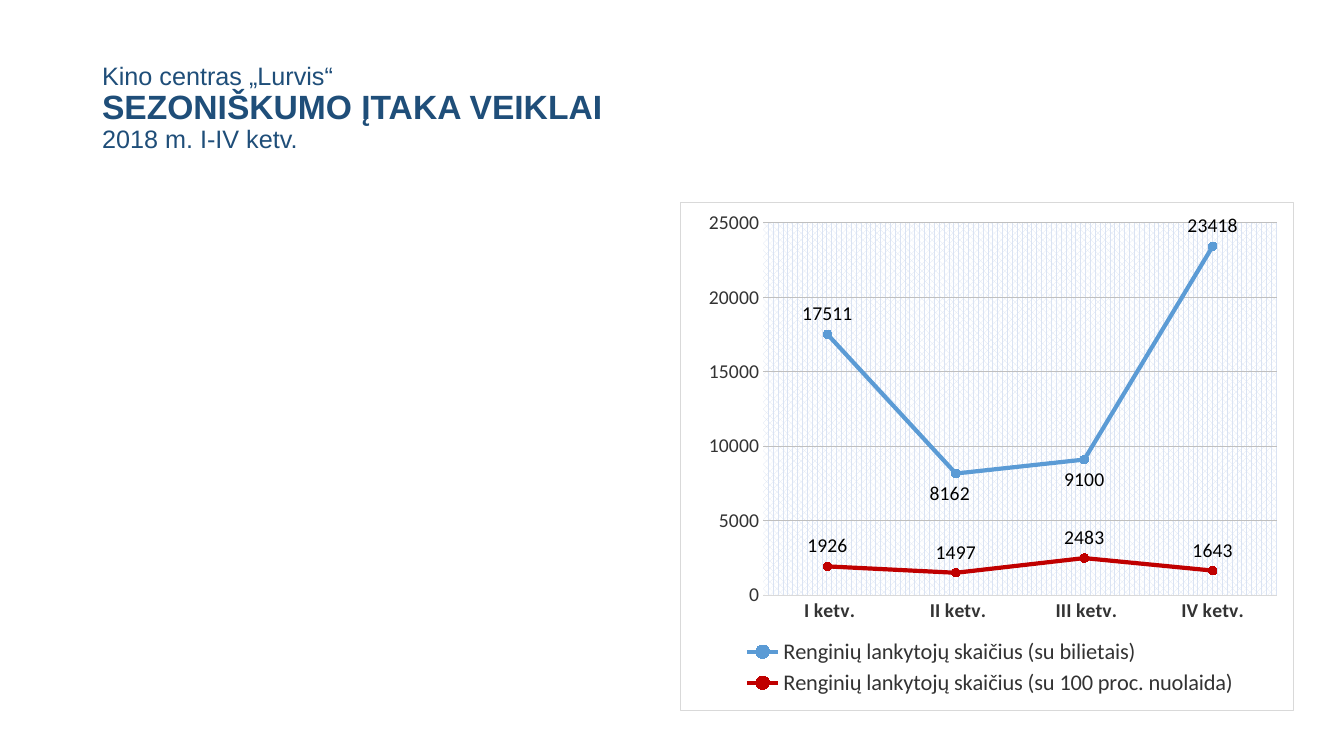
from lxml.etree import SubElement
from pptx import Presentation
from pptx.chart.data import CategoryChartData
from pptx.dml.color import RGBColor
from pptx.enum.chart import (XL_CHART_TYPE, XL_LABEL_POSITION, XL_LEGEND_POSITION,
                             XL_MARKER_STYLE, XL_TICK_MARK)
from pptx.enum.text import MSO_ANCHOR, MSO_AUTO_SIZE, PP_ALIGN
from pptx.oxml import parse_xml
from pptx.oxml.ns import nsdecls, qn
from pptx.util import Emu, Pt

NAVY = RGBColor(0x1F, 0x4E, 0x79)
BLUE = RGBColor(0x5B, 0x9B, 0xD5)
RED = RGBColor(0xC0, 0x00, 0x00)
BLACK = RGBColor(0x00, 0x00, 0x00)
DARK_GRAY = RGBColor(0x33, 0x33, 0x33)
GRID_GRAY = RGBColor(0xBF, 0xBF, 0xBF)
BORDER_GRAY = RGBColor(0xD9, 0xD9, 0xD9)
PALE_BLUE = RGBColor(0xDA, 0xE3, 0xF3)
WHITE = RGBColor(0xFF, 0xFF, 0xFF)

SLIDE_SIZE = (1344, 756)
TITLE_BOX = (92, 36, 1159, 146)
CHART_BOX = (680, 202, 614, 509)
TITLE_LINES = [
    ("Kino centras „Lurvis“", 18, False),
    ("SEZONIŠKUMO ĮTAKA VEIKLAI", 24, True),
    ("2018 m. I-IV ketv.", 18, False),
]
QUARTERS = [" I ketv.", " II ketv.", " III ketv.", "IV ketv."]
VISITORS = [
    ("Renginių lankytojų skaičius (su bilietais)", (17511, 8162, 9100, 23418), BLUE),
    ("Renginių lankytojų skaičius (su 100 proc. nuolaida)", (1926, 1497, 2483, 1643), RED),
]
LABELS_BELOW = (1, 2)
PLOT_LAYOUT = {"layoutTarget": "inner", "xMode": "edge", "yMode": "edge",
               "x": 0.135, "y": 0.04, "w": 0.838, "h": 0.733}
LEGEND_LAYOUT = {"xMode": "edge", "yMode": "edge",
                 "x": 0.09, "y": 0.85, "w": 0.83, "h": 0.13}
SHIFTED_LABEL_LAYOUT = {"x": -0.01, "y": 0}


def px(length):
    return Emu(round(length * 914400 / 100.8))


def style_font(font, size, color, name="Calibri", bold=False):
    font.size, font.name, font.bold = Pt(size), name, bold
    font.color.rgb = color


def add_text(para, text, **style):
    span = para.add_run()
    span.text = text
    style_font(span.font, **style)


def set_layout(parent, index, values):
    for old in parent.findall(qn("c:layout")):
        parent.remove(old)
    layout = parse_xml(f"<c:layout {nsdecls('c')}/>")
    manual = SubElement(layout, qn("c:manualLayout"))
    for key, value in values.items():
        SubElement(manual, qn(f"c:{key}")).set("val", str(value))
    parent.insert(index, layout)


def area_format(content):
    return parse_xml(f"<c:spPr {nsdecls('c', 'a')}>{content}</c:spPr>")


def solid(color):
    return f'<a:solidFill><a:srgbClr val="{color}"/></a:solidFill>'


def add_title(page):
    title = page.shapes.title
    title.left, title.top, title.width, title.height = map(px, TITLE_BOX)
    frame = title.text_frame
    frame.word_wrap = True
    frame.auto_size = MSO_AUTO_SIZE.NONE
    frame.vertical_anchor = MSO_ANCHOR.MIDDLE
    para = frame.paragraphs[0]
    para.alignment = PP_ALIGN.LEFT
    para.line_spacing = 0.9
    for index, (text, size, bold) in enumerate(TITLE_LINES):
        if index:
            para.add_line_break()
        add_text(para, text, size=size, color=NAVY, name="Arial", bold=bold)


def style_axes(chart):
    quarters, counts = chart.category_axis, chart.value_axis
    for axis, bold in ((quarters, True), (counts, False)):
        axis.major_tick_mark = axis.minor_tick_mark = XL_TICK_MARK.NONE
        style_font(axis.tick_labels.font, 14, DARK_GRAY, bold=bold)
    quarters.format.line.color.rgb = BORDER_GRAY
    quarters.format.line.width = Pt(0.75)
    counts.format.line.fill.background()
    counts.minimum_scale, counts.maximum_scale, counts.major_unit = 0, 25000, 5000
    grid = counts.major_gridlines.format.line
    grid.color.rgb = GRID_GRAY
    grid.width = Pt(0.75)


def style_series(series, color):
    series.smooth = False
    series.format.line.color.rgb = color
    series.format.line.width = Pt(3)
    marker = series.marker
    marker.style, marker.size = XL_MARKER_STYLE.CIRCLE, 6
    marker.format.fill.solid()
    marker.format.fill.fore_color.rgb = color
    marker.format.line.color.rgb = color
    labels = series.data_labels
    labels.show_value = True
    labels.position = XL_LABEL_POSITION.ABOVE
    style_font(labels.font, 14, BLACK)


def add_visitor_chart(page):
    data = CategoryChartData()
    data.categories = QUARTERS
    for name, values, _ in VISITORS:
        data.add_series(name, values)
    chart = page.shapes.add_chart(
        XL_CHART_TYPE.LINE_MARKERS, *map(px, CHART_BOX), data).chart
    style_font(chart.font, 10, BLACK)
    chart.has_title = False
    style_axes(chart)

    plot = chart.plots[0]
    plot.vary_by_categories = False
    for series, (_, _, color) in zip(plot.series, VISITORS):
        style_series(series, color)
    ticketed = plot.series[0]
    for index in LABELS_BELOW:
        label = ticketed.points[index].data_label
        label.position = XL_LABEL_POSITION.BELOW
        style_font(label.font, 14, BLACK)
    first_label = ticketed.data_labels._element.find(qn("c:dLbl"))
    set_layout(first_label, 1, SHIFTED_LABEL_LAYOUT)

    chart.has_legend = True
    legend = chart.legend
    legend.position = XL_LEGEND_POSITION.BOTTOM
    legend.include_in_layout = False
    style_font(legend.font, 16, DARK_GRAY)
    set_layout(legend._element, 1, LEGEND_LAYOUT)

    body = chart._chartSpace.find(qn("c:chart"))
    plot_area = body.find(qn("c:plotArea"))
    set_layout(plot_area, 0, PLOT_LAYOUT)
    plot_area.append(area_format(
        f'<a:pattFill prst="pct70"><a:fgClr><a:srgbClr val="{PALE_BLUE}"/></a:fgClr>'
        f'<a:bgClr><a:srgbClr val="{WHITE}"/></a:bgClr></a:pattFill>'))
    body.addnext(area_format(
        f'{solid(WHITE)}<a:ln w="{Pt(0.75)}">{solid(BORDER_GRAY)}</a:ln>'))


def main():
    deck = Presentation()
    deck.slide_width, deck.slide_height = map(px, SLIDE_SIZE)
    page = deck.slides.add_slide(deck.slide_layouts[5])
    add_title(page)
    add_visitor_chart(page)
    deck.save("out.pptx")


if __name__ == "__main__":
    main()
